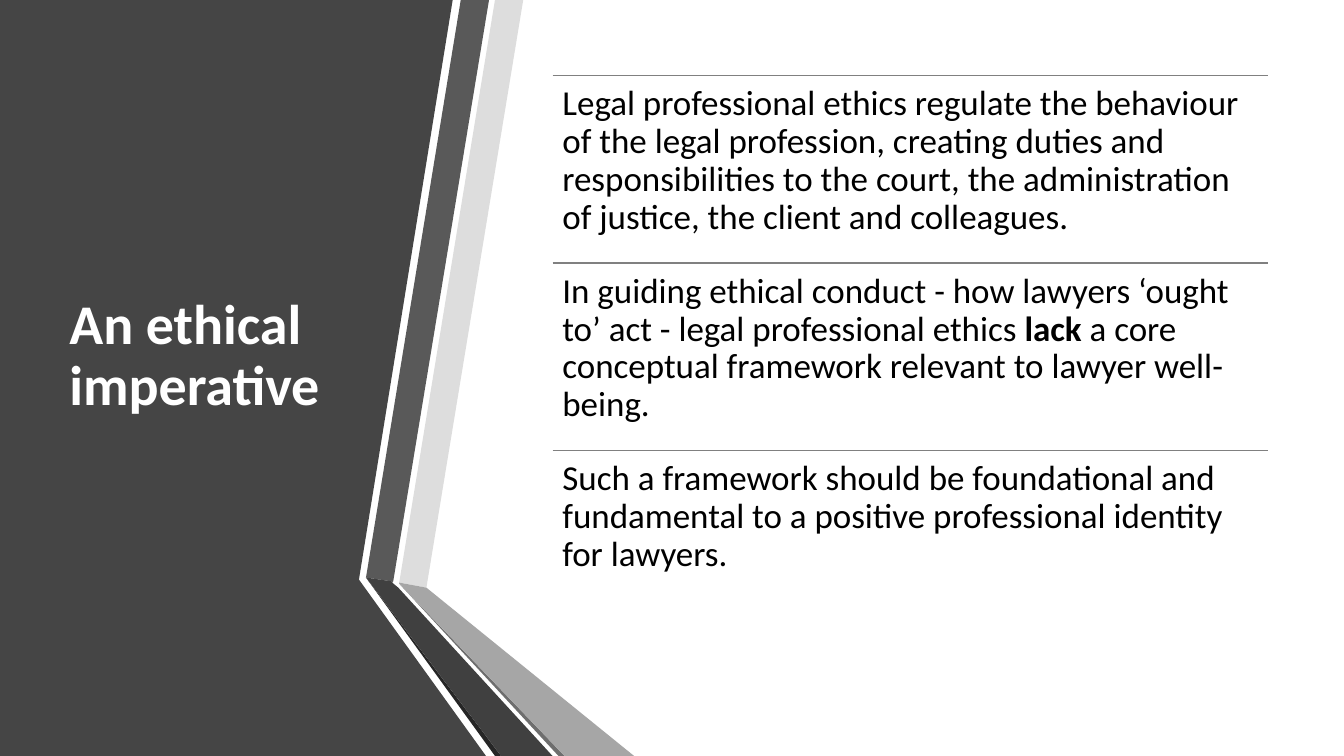
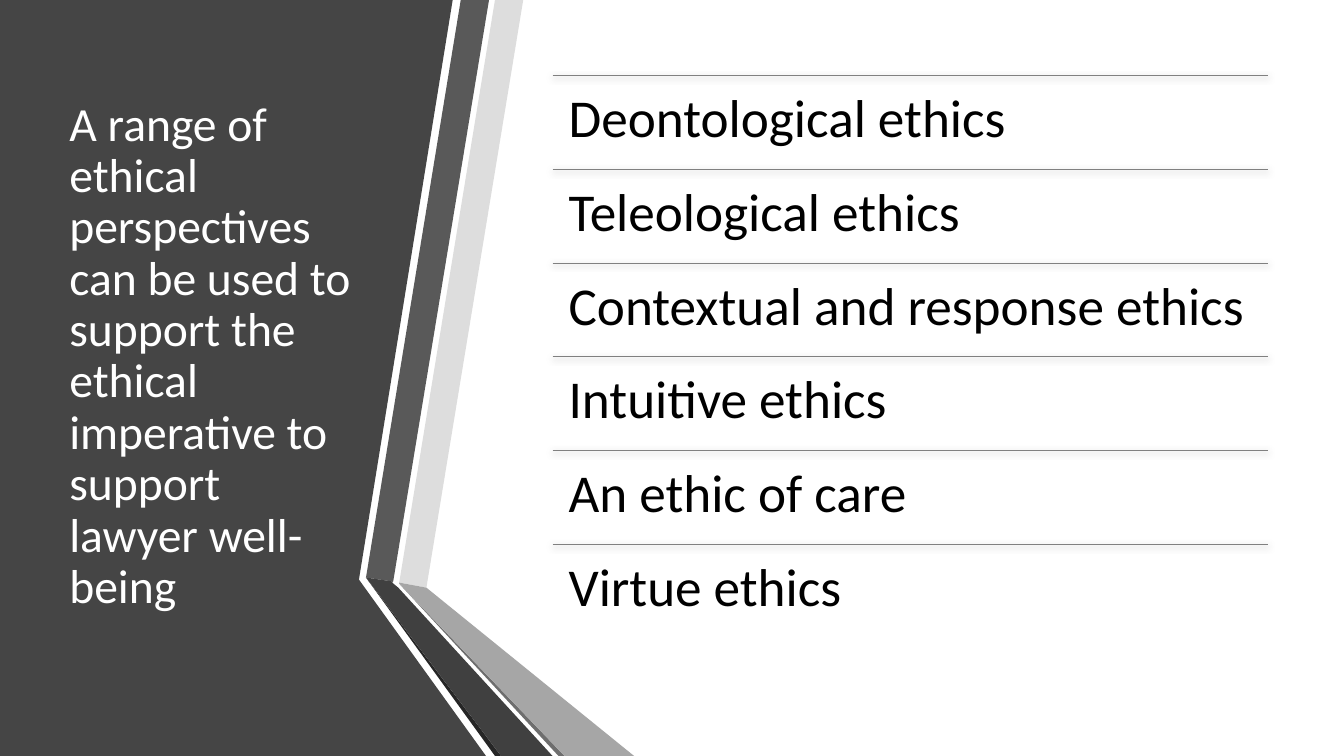
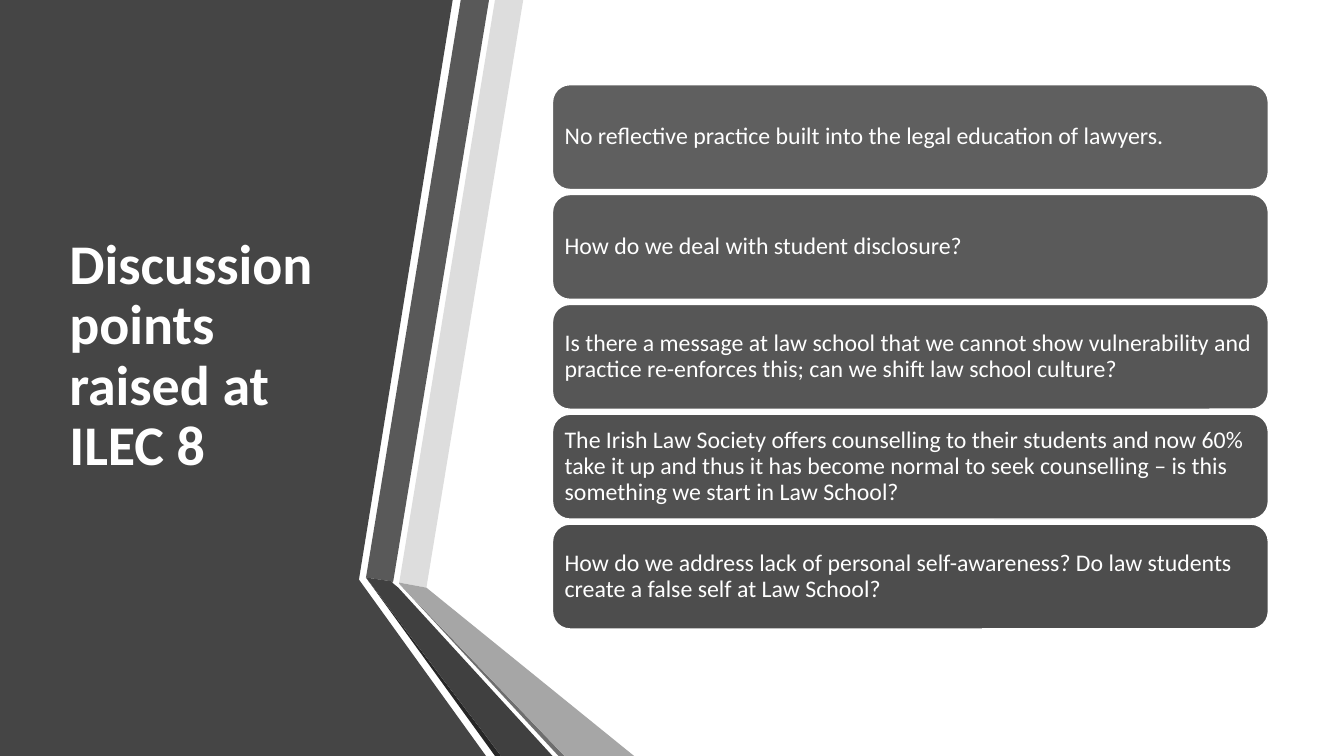
from lxml.etree import SubElement
from pptx import Presentation
from pptx.dml.color import RGBColor
from pptx.enum.shapes import MSO_CONNECTOR, MSO_SHAPE
from pptx.enum.text import MSO_ANCHOR, PP_ALIGN
from pptx.oxml.ns import qn
from pptx.util import Inches, Pt

# Shared look
FONT = "Calibri"
WHITE, BLACK, RULE = "FFFFFF", "000000", "808080"

# Grid: title column on the left, body column on the right, one common band
WIDTH, HEIGHT = 13.33, 7.5
BAND_TOP, BAND_HEIGHT = 0.1 * HEIGHT, 5.58
TITLE_LEFT, TITLE_WIDTH = 0.59, 3.04
BODY_LEFT, BODY_WIDTH = 5.48, 7.1
CARD_HEIGHT, CARD_GAP = 1.04, 0.05

# Folded ribbon: fill and corners, in hundredths of an inch
RIBBON = [
    ("454545", [(0, 0), (449, 0), (356, 575), (482, 750), (0, 750)]),
    ("DDDDDD", [(396, 578), (423, 583), (519, 0), (491, 0)]),
    ("595959", [(485, 0), (457, 0), (363, 573), (390, 577)]),
    ("262626", [(363, 573), (491, 750), (497, 750)]),
    ("6E6E6E", [(396, 579), (554, 750), (560, 750)]),
    ("A6A6A6", [(396, 579), (560, 750), (629, 750), (423, 583), (396, 578)]),
    ("404040", [(548, 750), (395, 583), (389, 578), (390, 577), (363, 573), (497, 750)]),
]

# Content: each entry of a list is a sequence of (text, bold) runs
IMPERATIVE = [
    [("Legal professional ethics regulate the behaviour of the legal profession, creating "
      "duties and responsibilities to the court, the administration of justice, the client "
      "and colleagues.", False)],
    [("In guiding ethical conduct - how lawyers ‘ought to’ act - legal professional ethics ", False),
     ("lack", True),
     (" a core conceptual framework relevant to lawyer well-being.", False)],
    [("Such a framework should be foundational and fundamental to a positive professional "
      "identity for lawyers.", False)],
]
PERSPECTIVES = [[(name, False)] for name in (
    "Deontological ethics", "Teleological ethics", "Contextual and response ethics",
    "Intuitive ethics", "An ethic of care", "Virtue ethics")]
DISCUSSION = [
    "No reflective practice built into the legal education of lawyers.",
    "How do we deal with student disclosure?",
    "Is there a message at law school that we cannot show vulnerability and practice "
    "re-enforces this; can we shift law school culture?",
    "The Irish Law Society offers counselling to their students and now 60% take it up and "
    "thus it has become normal to seek counselling – is this something we start in Law School?",
    "How do we address lack of personal self-awareness? Do law students create a false self "
    "at Law School?",
]
TITLES = [
    ("An ethical imperative", 40, True),
    ("A range of ethical perspectives can be used to support the ethical imperative to "
     "support lawyer well-being", 34, False),
    ("Discussion points raised at ILEC 8", 40, True),
]


def rgb(hex_string):
    return RGBColor.from_string(hex_string)


def write(shape, runs, size, color, inset, anchor):
    frame = shape.text_frame
    frame.word_wrap = True
    frame.vertical_anchor = anchor
    frame.margin_left = frame.margin_right = Inches(inset)
    frame.margin_top = frame.margin_bottom = Inches(inset)
    paragraph = frame.paragraphs[0]
    paragraph.alignment = PP_ALIGN.LEFT
    paragraph.line_spacing = 0.9
    for text, bold in runs:
        run = paragraph.add_run()
        run.text = text
        run.font.name = FONT
        run.font.size = Pt(size)
        run.font.bold = bold
        run.font.color.rgb = rgb(color)


deck = Presentation()
deck.slide_width, deck.slide_height = Inches(WIDTH), Inches(HEIGHT)
slides = []

# Ribbon and title on every slide
for title, size, bold in TITLES:
    slide = deck.slides.add_slide(deck.slide_layouts[6])
    slides.append(slide)
    for fill, corners in RIBBON:
        outline = slide.shapes.build_freeform(*corners[0], scale=Inches(0.01))
        outline.add_line_segments(corners[1:], close=True)
        facet = outline.convert_to_shape()
        facet.shadow.inherit = False
        facet.fill.solid()
        facet.fill.fore_color.rgb = rgb(fill)
        facet.line.fill.background()
    heading = slide.shapes.add_textbox(
        Inches(TITLE_LEFT), Inches(BAND_TOP), Inches(TITLE_WIDTH), Inches(BAND_HEIGHT))
    write(heading, [(title, bold)], size, WHITE, 0.1, MSO_ANCHOR.MIDDLE)

# Slides 1 and 2: ruled lists with equal rows
for slide, entries, size, inset, rule_width, shaded in (
        (slides[0], IMPERATIVE, 25, 0.1, 1, False),
        (slides[1], PERSPECTIVES, 38, 0.16, 0.5, True)):
    row_height = BAND_HEIGHT / len(entries)
    for row, runs in enumerate(entries):
        top = BAND_TOP + row * row_height
        rule = slide.shapes.add_connector(
            MSO_CONNECTOR.STRAIGHT, Inches(BODY_LEFT), Inches(top),
            Inches(BODY_LEFT + BODY_WIDTH), Inches(top))
        rule.line.color.rgb = rgb(RULE)
        rule.line.width = Pt(rule_width)
        effects = SubElement(rule._element.spPr, qn("a:effectLst"))
        if shaded:
            shade = SubElement(effects, qn("a:outerShdw"), blurRad=str(Pt(4.5)),
                               dist=str(Pt(1.5)), dir="5400000", rotWithShape="0")
            shade_color = SubElement(shade, qn("a:srgbClr"), val=BLACK)
            SubElement(shade_color, qn("a:alpha"), val="63000")
        entry = slide.shapes.add_textbox(
            Inches(BODY_LEFT), Inches(top), Inches(BODY_WIDTH), Inches(row_height))
        write(entry, runs, size, BLACK, inset, MSO_ANCHOR.TOP)

# Slide 3: stack of cards centred in the band, darkening downwards
stack_height = len(DISCUSSION) * (CARD_HEIGHT + CARD_GAP) - CARD_GAP
stack_top = BAND_TOP + (BAND_HEIGHT - stack_height) / 2
for row, point in enumerate(DISCUSSION):
    card = slides[2].shapes.add_shape(
        MSO_SHAPE.ROUNDED_RECTANGLE, Inches(BODY_LEFT),
        Inches(stack_top + row * (CARD_HEIGHT + CARD_GAP)),
        Inches(BODY_WIDTH), Inches(CARD_HEIGHT))
    card.shadow.inherit = False
    card.fill.solid()
    card.fill.fore_color.rgb = rgb(f"{int(95 - 4.5 * row):02X}" * 3)
    card.line.color.rgb = rgb(WHITE)
    card.line.width = Pt(1)
    write(card, [(point, False)], 17, WHITE, 0.07, MSO_ANCHOR.MIDDLE)

deck.save("out.pptx")
